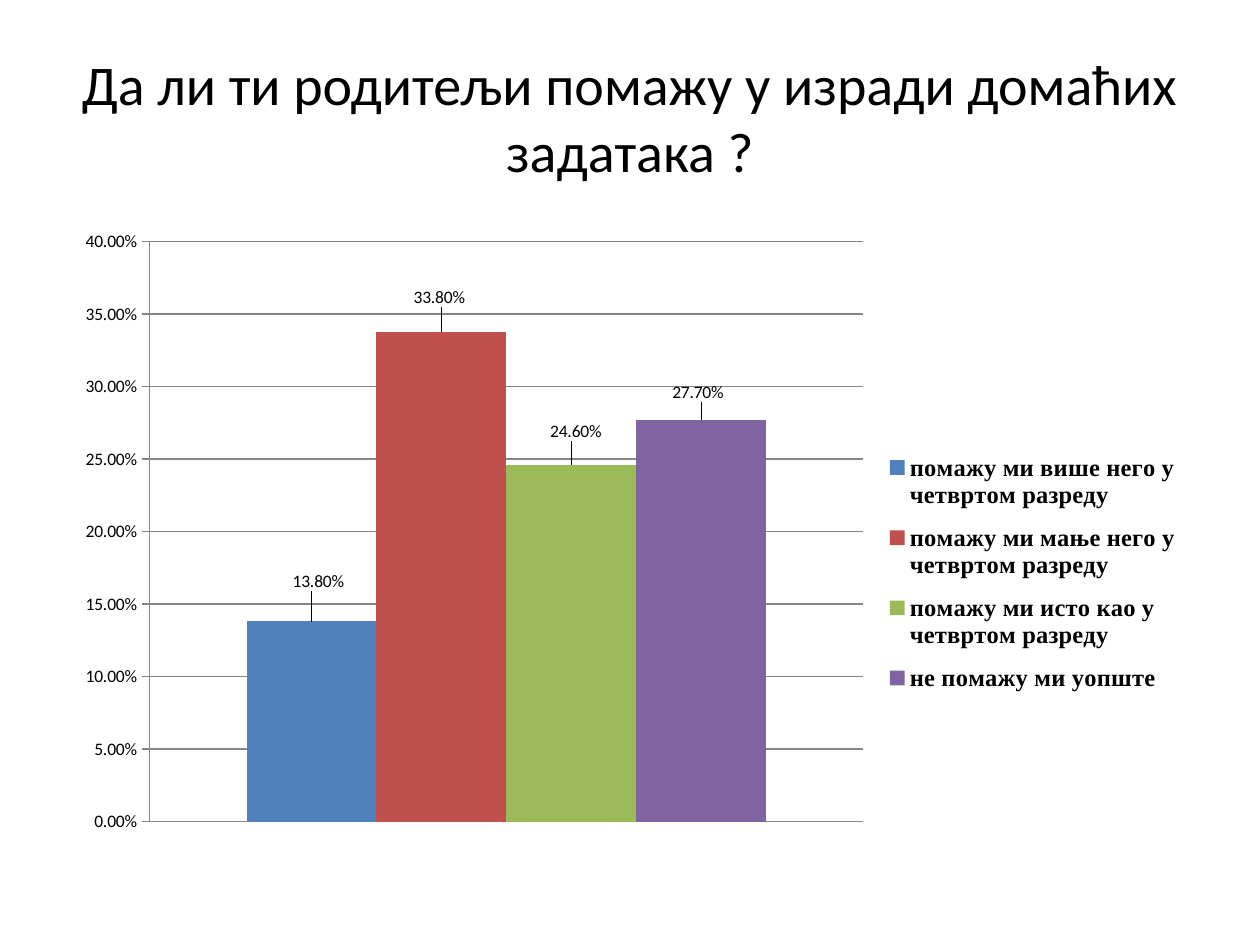
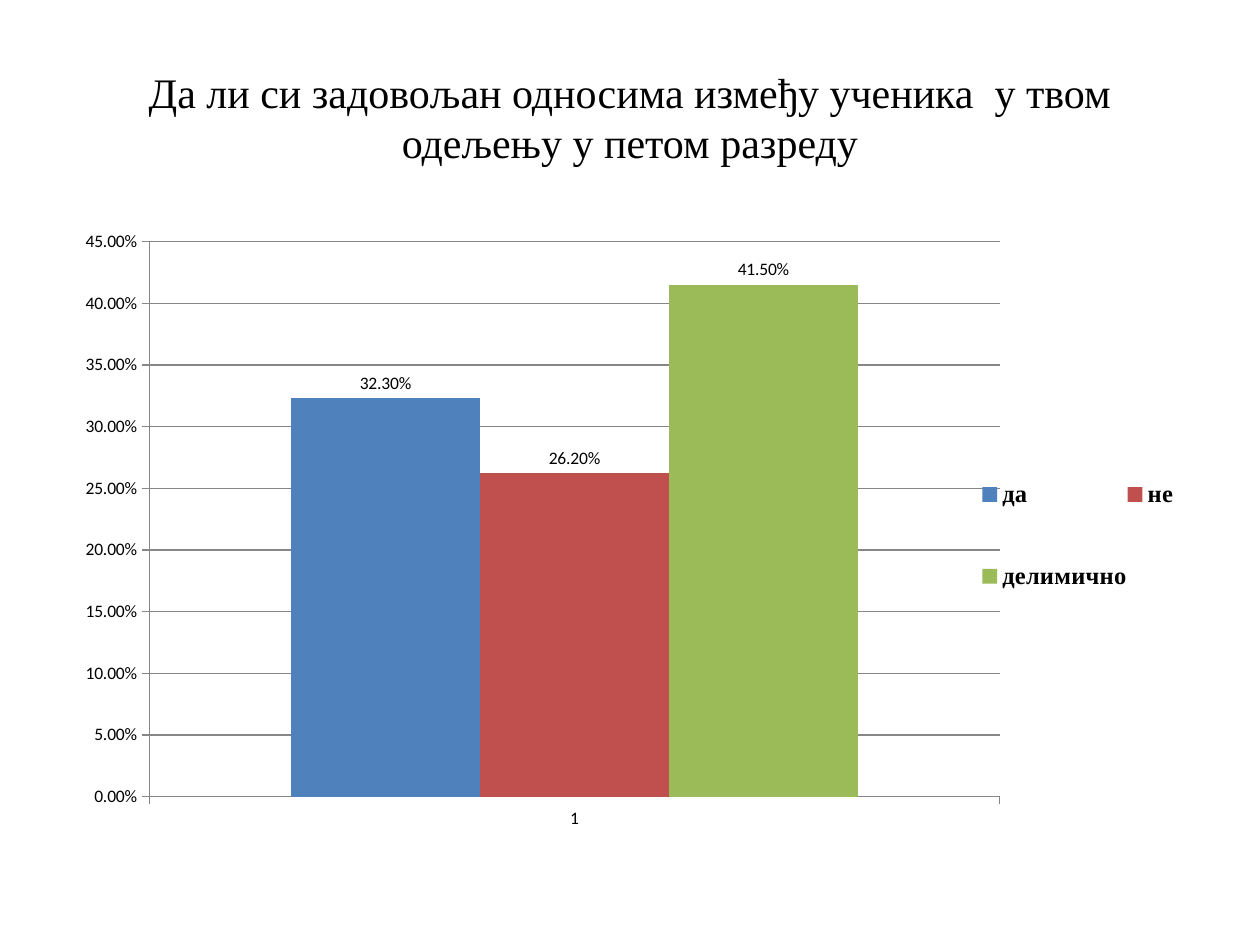
from dataclasses import dataclass
from typing import Any

from lxml.etree import SubElement
from pptx import Presentation
from pptx.chart.data import CategoryChartData
from pptx.dml.color import RGBColor
from pptx.enum.chart import XL_CHART_TYPE, XL_LABEL_POSITION, XL_LEGEND_POSITION, XL_TICK_MARK
from pptx.enum.text import MSO_ANCHOR, PP_ALIGN
from pptx.oxml.ns import qn
from pptx.util import Inches, Pt

COLORS = {
    "text": "000000",
    "grid": "868686",
    "blue": "4F81BD",
    "red": "C0504D",
    "green": "9BBB59",
    "purple": "8064A2",
}
BAR_COLORS = ("blue", "red", "green", "purple")
SANS, SERIF = "Calibri", "Times New Roman"
PERCENT = "0.00%"
WIDTH, HEIGHT = Inches(10), Inches(7.5)
TITLE_BOX = (0.05, 0.04, 0.9, 1 / 6)
CHART_BOX = (0.05, 7 / 30, 0.9, 0.66)
PLOT_LEFT, PLOT_TOP = 0.076, 0.034


@dataclass(frozen=True)
class Answer:
    name: str
    share: float
    label_shift: tuple[float, float] | None = None


@dataclass(frozen=True)
class Question:
    title: str
    title_font: str
    title_size: int
    answers: tuple[Answer, ...]
    axis_max: float
    show_category: bool
    plot_size: tuple[float, float]
    legend_box: tuple[float, float, float, float]


QUESTIONS = (
    Question(
        "Да ли ти родитељи помажу у изради домаћих задатака ?", SANS, 32,
        (
            Answer("помажу ми више него у четвртом разреду", 0.138, (0.006, -0.04)),
            Answer("помажу ми мање него у четвртом разреду", 0.338, (-0.002, -0.03)),
            Answer("помажу ми исто као у четвртом разреду", 0.246, (0.004, -0.03)),
            Answer("не помажу ми уопште", 0.277, (-0.003, -0.02)),
        ),
        0.4, False, (0.63, 0.93), (0.71, 0.35, 0.29, 0.43),
    ),
    Question(
        "Да ли си задовољан односима између ученика  у твом одељењу у петом разреду", SERIF, 24,
        (Answer("да", 0.323), Answer("не", 0.262), Answer("делимично", 0.415)),
        0.45, True, (0.75, 0.89), (0.81, 0.33, 0.17, 0.35),
    ),
)


def rgb(name: str) -> RGBColor:
    return RGBColor.from_string(COLORS[name])


def apply(target: Any, formats: dict[str, Any]) -> None:
    for name, value in formats.items():
        setattr(target, name, value)


def style_font(font: Any, name: str, size: int, bold: bool = False) -> None:
    apply(font, {"name": name, "size": Pt(size), "bold": bold})
    font.color.rgb = rgb("text")


def style_line(line: Any) -> None:
    line.color.rgb = rgb("grid")
    line.width = Pt(0.75)


def place(box: tuple[float, ...]) -> tuple[int, ...]:
    return tuple(int(share * side) for share, side in zip(box, (WIDTH, HEIGHT) * 2))


def set_layout(parent: Any, index: int, values: dict[str, Any]) -> None:
    for old in parent.findall(qn("c:layout")):
        parent.remove(old)
    layout = SubElement(parent, qn("c:layout"))
    manual = SubElement(layout, qn("c:manualLayout"))
    for tag, value in values.items():
        SubElement(manual, qn(f"c:{tag}")).set("val", str(value))
    parent.insert(index, layout)


def edge_box(x: float, y: float, w: float, h: float) -> dict[str, Any]:
    return {"xMode": "edge", "yMode": "edge", "x": x, "y": y, "w": w, "h": h}


def add_title(s: Any, question: Question) -> None:
    title = s.shapes.title
    apply(title, dict(zip(("left", "top", "width", "height"), place(TITLE_BOX))))
    tf = title.text_frame
    apply(tf, {"word_wrap": True, "vertical_anchor": MSO_ANCHOR.MIDDLE})
    p = tf.paragraphs[0]
    p.alignment = PP_ALIGN.CENTER
    r = p.add_run()
    r.text = question.title
    style_font(r.font, question.title_font, question.title_size)


def style_axes(chart: Any, question: Question) -> None:
    apply(chart.value_axis, {
        "minimum_scale": 0,
        "maximum_scale": question.axis_max,
        "major_unit": 0.05,
        "has_major_gridlines": True,
    })
    style_line(chart.value_axis.major_gridlines.format.line)
    apply(chart.value_axis.tick_labels, {"number_format": PERCENT, "number_format_is_linked": False})
    chart.category_axis.visible = question.show_category
    for axis in (chart.value_axis, chart.category_axis):
        axis.major_tick_mark = XL_TICK_MARK.OUTSIDE
        style_line(axis.format.line)


def style_bars(plot: Any, question: Question) -> None:
    apply(plot, {"gap_width": 150, "overlap": 0, "vary_by_categories": False})
    for series, answer, color in zip(plot.series, question.answers, BAR_COLORS):
        series.format.fill.solid()
        series.format.fill.fore_color.rgb = rgb(color)
        labels = series.data_labels
        apply(labels, {
            "show_value": True,
            "number_format": PERCENT,
            "number_format_is_linked": False,
            "position": XL_LABEL_POSITION.OUTSIDE_END,
        })
        if answer.label_shift:
            series.points[0].data_label.position = XL_LABEL_POSITION.OUTSIDE_END
            label = series.data_labels._element.find(qn("c:dLbl"))
            set_layout(label, 1, dict(zip("xy", answer.label_shift)))


def add_answer_chart(s: Any, question: Question) -> None:
    data = CategoryChartData(number_format=PERCENT)
    data.categories = ["1"]
    for answer in question.answers:
        data.add_series(answer.name, [answer.share])
    frame = s.shapes.add_chart(XL_CHART_TYPE.COLUMN_CLUSTERED, *place(CHART_BOX), data)
    chart = frame.chart
    apply(chart, {"has_title": False, "has_legend": True})
    style_font(chart.font, SANS, 10)
    style_axes(chart, question)
    style_bars(chart.plots[0], question)
    legend = chart.legend
    apply(legend, {"position": XL_LEGEND_POSITION.RIGHT, "include_in_layout": False})
    style_font(legend.font, SERIF, 14, True)
    set_layout(legend._element, 1, edge_box(*question.legend_box))
    plot_area = chart._chartSpace.chart.plotArea
    plot_box = edge_box(PLOT_LEFT, PLOT_TOP, *question.plot_size)
    set_layout(plot_area, 0, {"layoutTarget": "inner", **plot_box})


def main() -> None:
    prs = Presentation()
    apply(prs, {"slide_width": WIDTH, "slide_height": HEIGHT})
    for question in QUESTIONS:
        s = prs.slides.add_slide(prs.slide_layouts[5])
        add_title(s, question)
        add_answer_chart(s, question)
    prs.save("out.pptx")


if __name__ == "__main__":
    main()
